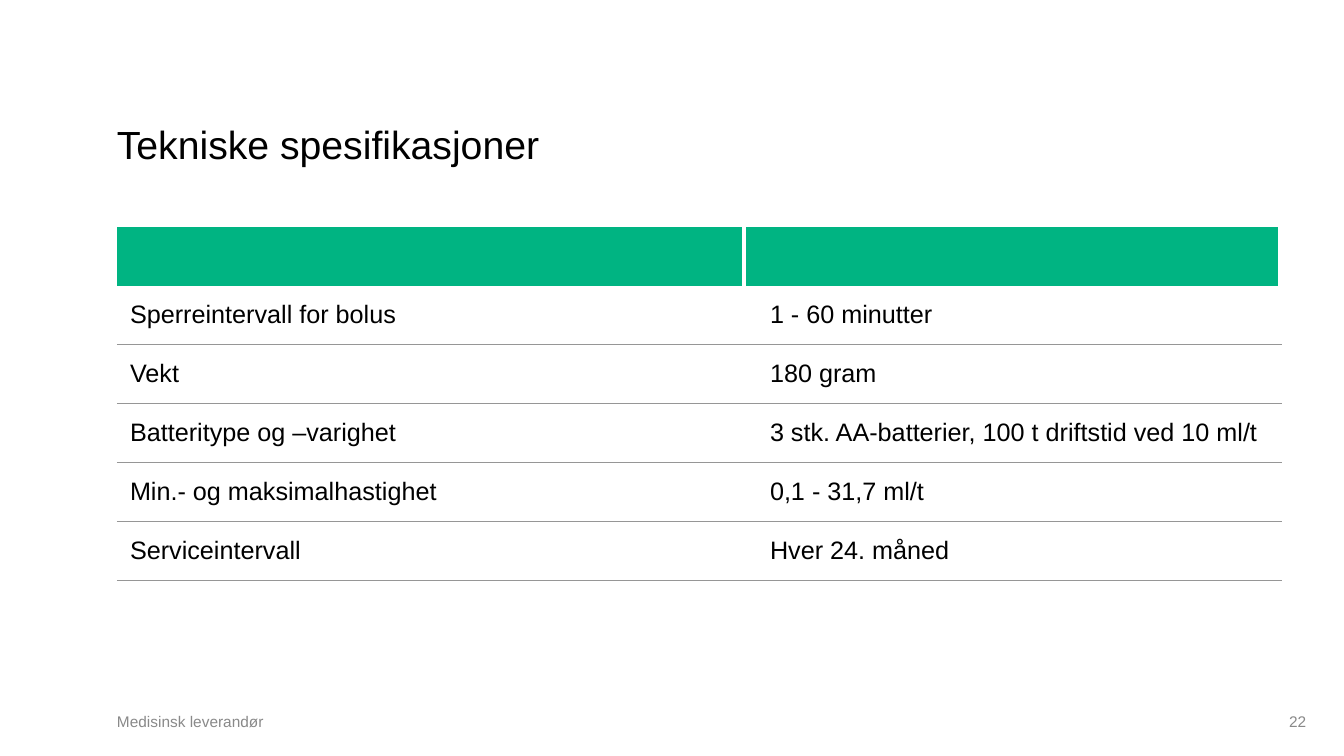
from dataclasses import dataclass

from lxml import etree
from pptx import Presentation
from pptx.dml.color import RGBColor
from pptx.enum import text
from pptx.oxml import ns
from pptx.util import Pt


@dataclass(frozen=True)
class Theme:
    font: str = "Arial"
    ink: str = "000000"
    muted: str = "898989"
    accent: str = "00B482"
    rule: str = "969696"
    gap: str = "FFFFFF"
    title_size: float = 28
    table_size: float = 18
    footer_size: float = 11
    rule_width: float = 0.5
    gap_width: float = 3


class SlideBuilder:
    def __init__(self, page, theme):
        self.page = page
        self.theme = theme

    def style(self, para, size, color, align=text.PP_ALIGN.LEFT):
        para.alignment = align
        para.space_before = Pt(0)
        para.font.name = self.theme.font
        para.font.size = Pt(size)
        para.font.color.rgb = RGBColor.from_string(color)

    def set_margins(self, frame, left, top, right, bottom):
        frame.margin_left, frame.margin_top = Pt(left), Pt(top)
        frame.margin_right, frame.margin_bottom = Pt(right), Pt(bottom)

    def title(self, words, left, top, width, height):
        box = self.page.shapes.title
        box.left, box.top, box.width, box.height = map(Pt, (left, top, width, height))
        frame = box.text_frame
        frame.text = words
        frame.vertical_anchor = text.MSO_ANCHOR.BOTTOM
        self.set_margins(frame, 0, 0, 0, 0)
        self.style(frame.paragraphs[0], self.theme.title_size, self.theme.ink)

    def footer(self, words, left, width, align):
        box = self.page.shapes.add_textbox(Pt(left), Pt(502.6), Pt(width), Pt(25.2))
        frame = box.text_frame
        frame.word_wrap = True
        frame.text = words
        frame.vertical_anchor = text.MSO_ANCHOR.MIDDLE
        self.set_margins(frame, 8.64, 0, 8.64, 0)
        self.style(frame.paragraphs[0], self.theme.footer_size, self.theme.muted, align)

    def border(self, cell, edge, width=0, color=None):
        """Draw one cell edge (L, R, T or B), or clear it when no colour is given."""
        props = cell._tc.get_or_add_tcPr()
        line = etree.SubElement(props, ns.qn(f"a:ln{edge}"), w=str(Pt(width)))
        if color is None:
            etree.SubElement(line, ns.qn("a:noFill"))
        else:
            fill = etree.SubElement(line, ns.qn("a:solidFill"))
            etree.SubElement(fill, ns.qn("a:srgbClr"), val=color)

    def table(self, rows, left, top, column_widths, row_height):
        """Draw rows of text under an empty coloured header row."""
        row_count = len(rows) + 1
        frame = self.page.shapes.add_table(
            row_count, len(column_widths), Pt(left), Pt(top),
            Pt(sum(column_widths)), Pt(row_height * row_count))
        table = frame.table
        table.first_row = table.horz_banding = False
        for column, width in zip(table.columns, column_widths):
            column.width = Pt(width)
        blank = [""] * len(column_widths)
        for r, values in enumerate([blank, *rows]):
            table.rows[r].height = Pt(row_height)
            for c, value in enumerate(values):
                self.cell(table.cell(r, c), value, r, c)

    def cell(self, cell, value, r, c):
        theme = self.theme
        gap = (theme.gap_width, theme.gap)
        rule = (theme.rule_width, theme.rule)
        self.set_margins(cell, 9.36 if c == 0 else 18.72, 3.6, 9.36, 3.6)
        cell.vertical_anchor = text.MSO_ANCHOR.MIDDLE
        self.border(cell, "L", *(gap if c else ()))
        self.border(cell, "R", *gap)
        self.border(cell, "T", *(rule if r > 1 else ()))
        self.border(cell, "B", *(rule if r else ()))
        if r == 0:
            cell.fill.solid()
            cell.fill.fore_color.rgb = RGBColor.from_string(theme.accent)
        else:
            cell.fill.background()
        cell.text = value
        self.style(cell.text_frame.paragraphs[0], theme.table_size, theme.ink)


SPECIFICATIONS = [
    ("Sperreintervall for bolus", "1 - 60 minutter"),
    ("Vekt", "180 gram"),
    ("Batteritype og –varighet", "3 stk. AA-batterier, 100 t driftstid ved 10 ml/t"),
    ("Min.- og maksimalhastighet", "0,1 - 31,7 ml/t"),
    ("Serviceintervall", "Hver 24. måned"),
]


def main():
    deck = Presentation()
    deck.slide_width, deck.slide_height = Pt(960), Pt(540)
    title_only = deck.slide_layouts[5]
    builder = SlideBuilder(deck.slides.add_slide(title_only), Theme())
    builder.title("Tekniske spesifikasjoner", 83.5, 51.8, 850.3, 67.7)
    builder.table(SPECIFICATIONS, 83.5, 162, (447.8, 383), 42.1)
    builder.footer("Medisinsk leverandør", 74.9, 294.5, text.PP_ALIGN.LEFT)
    builder.footer("22", 717.8, 223.9, text.PP_ALIGN.RIGHT)
    deck.save("out.pptx")


if __name__ == "__main__":
    main()
